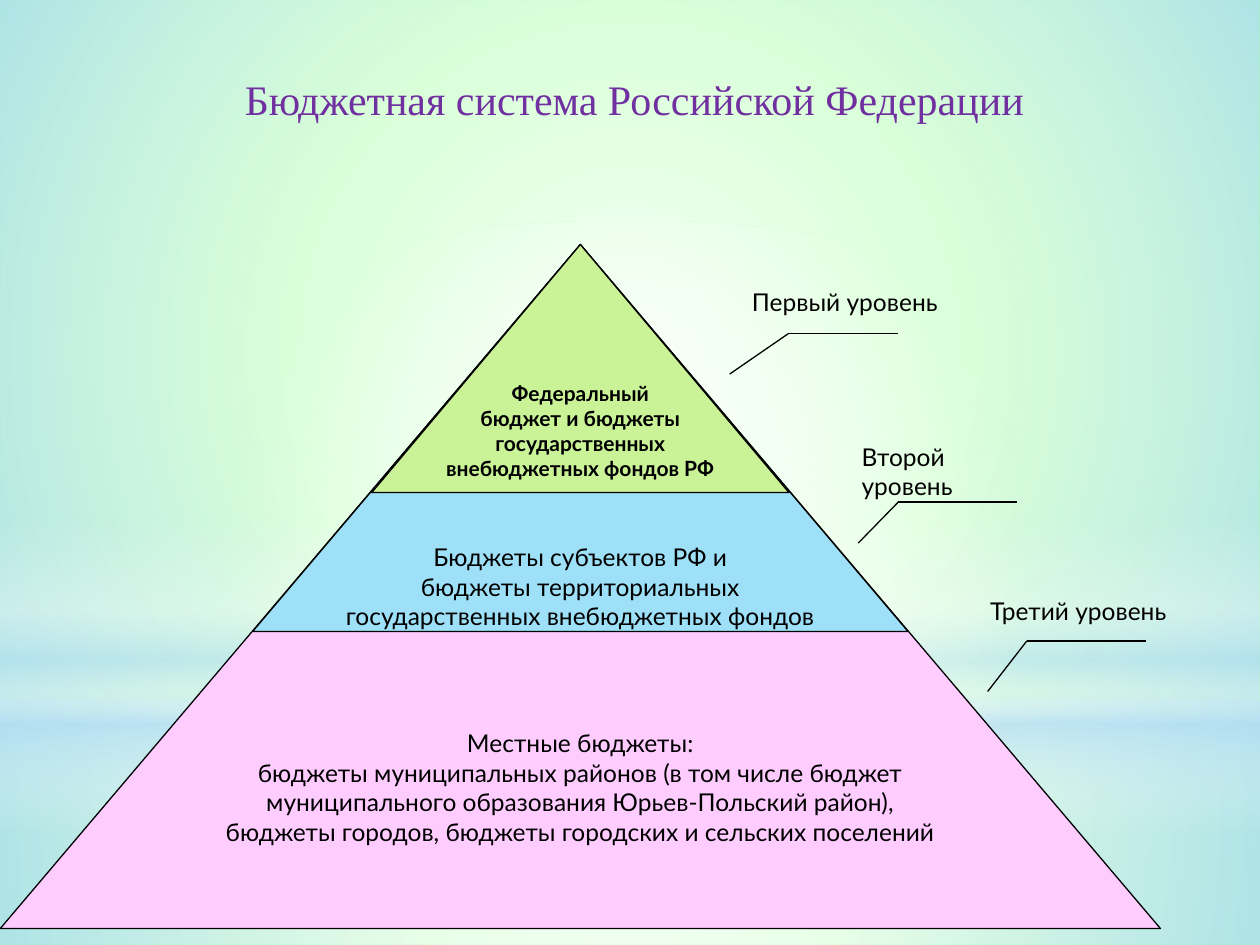
from lxml import etree
from pptx import Presentation
from pptx import util as u
from pptx.dml.color import RGBColor
from pptx.enum import shapes, text
from pptx.oxml import ns

APEX_X, APEX_Y = 11.7, 4.93
CIRCLE = {"l": "50000", "t": "50000", "r": "50000", "b": "50000"}

# Soft background light: shape, left, top, width, height, stops, angle (None is circular)
# A stop is position, colour, opacity in per cent
GLOWS = [
    ("RECTANGLE", 0, 14.17, 25.4, 4.88,
     [(0, "FFFFFF", 91), (37, "FFFFFF", 76), (100, "B4DCFA", 79)], None),
    ("RECTANGLE", 0, 0, 25.4, 14.17,
     [(0, "FFFFFF", 89), (48, "FFFFFF", 62), (100, "B4DCFA", 79)], None),
    ("RECTANGLE", 0, 10.46, 25.4, 6.35,
     [(0, "FFFFFF", 0), (29, "FFFFFF", 30), (45, "B4DCFA", 40),
      (55, "FFFFFF", 26), (65, "B4DCFA", 60), (100, "FFFFFF", 0)], 90),
    ("OVAL", 0, 4.45, 25.4, 14.17,
     [(0, "FFFFFF", 100), (56, "FFFFFF", 0)], None),
]

# Width, height, colour, font size, bold, top inset, bottom inset, lines
TIERS = [
    (23.39, 13.79, "FFCCFF", 14, False, 1.32, 0.13,
     ["Местные бюджеты:",
      "бюджеты муниципальных районов (в том числе бюджет",
      "муниципального образования Юрьев-Польский район),",
      "бюджеты городов, бюджеты городских и сельских поселений"]),
    (13.21, 7.8, "9EE0F8", 14, False, 2.08, 0,
     ["Бюджеты субъектов РФ и",
      "бюджеты территориальных",
      "государственных внебюджетных фондов"]),
    (8.41, 5, "CAF297", 12, True, 0.13, 0.13,
     ["Федеральный",
      "бюджет и бюджеты",
      "государственных",
      "внебюджетных фондов РФ"]),
]

# Label, its left, top and width, then the leader's start, bend and right end
LEVELS = [
    ("Первый уровень", 14.91, 5.66, 4.29, (14.71, 7.54), (15.9, 6.72), 18.11),
    ("Второй\vуровень", 17.12, 9.07, 4.11, (17.3, 10.95), (18.11, 10.12), 20.5),
    ("Третий уровень", 19.71, 11.89, 4.14, (19.91, 13.94), (20.7, 12.92), 23.11),
]


def color(value):
    return RGBColor.from_string(value)


def box(*lengths):
    return [u.Cm(length) for length in lengths]


def set_text(frame, content, size, font="Lato", fill="000000", bold=False, align="CENTER"):
    frame.text = content
    frame.vertical_anchor = text.MSO_ANCHOR.MIDDLE
    for paragraph in frame.paragraphs:
        paragraph.alignment = getattr(text.PP_ALIGN, align)
        for run in paragraph.runs:
            run.font.name = font
            run.font.size = u.Pt(size)
            run.font.bold = bold
            run.font.color.rgb = color(fill)


def add_glow(slide, kind, left, top, width, height, stops, angle):
    shape = slide.shapes.add_shape(getattr(shapes.MSO_SHAPE, kind),
                                   *box(left, top, width, height))
    shape.shadow.inherit = False
    shape.line.fill.background()
    shape.fill.gradient()
    gradient = shape.element.spPr.find(ns.qn("a:gradFill"))
    for child in list(gradient):
        gradient.remove(child)
    stop_list = etree.SubElement(gradient, ns.qn("a:gsLst"))
    for position, value, opacity in stops:
        stop = etree.SubElement(stop_list, ns.qn("a:gs"), pos=str(position * 1000))
        rgb = etree.SubElement(stop, ns.qn("a:srgbClr"), val=value)
        etree.SubElement(rgb, ns.qn("a:alpha"), val=str(opacity * 1000))
    if angle is None:
        circle = etree.SubElement(gradient, ns.qn("a:path"), {"path": "circle"})
        etree.SubElement(circle, ns.qn("a:fillToRect"), CIRCLE)
    else:
        etree.SubElement(gradient, ns.qn("a:lin"), ang=str(angle * 60000), scaled="0")


def add_title(slide):
    title = slide.shapes.title
    title.left, title.top, title.width, title.height = box(4.09, 0.99, 17.4, 2.01)
    set_text(title.text_frame, "Бюджетная система Российской Федерации", 24,
             font="Times New Roman", fill="7030A0")
    slide.shapes.element.append(title.element)  # in front of the background


def add_tier(slide, width, height, fill, size, bold, inset_top, inset_bottom, lines):
    shape = slide.shapes.add_shape(shapes.MSO_SHAPE.ISOSCELES_TRIANGLE,
                                   *box(APEX_X - width / 2, APEX_Y, width, height))
    shape.shadow.inherit = False
    shape.fill.solid()
    shape.fill.fore_color.rgb = color(fill)
    shape.line.color.rgb = color("000000")
    shape.line.width = u.Pt(0.75)
    frame = shape.text_frame
    frame.word_wrap = False
    frame.margin_top, frame.margin_bottom = box(inset_top, inset_bottom)
    set_text(frame, "\n".join(lines), size, bold=bold)


def add_line(slide, start, end):
    line = slide.shapes.add_connector(shapes.MSO_CONNECTOR.STRAIGHT, *box(*start, *end))
    line.line.color.rgb = color("000000")
    line.line.width = u.Pt(0.75)
    etree.SubElement(line.element.spPr, ns.qn("a:effectLst"))


def add_level(slide, label, left, top, width, start, bend, right):
    add_line(slide, start, bend)
    add_line(slide, bend, (right, bend[1]))
    frame = slide.shapes.add_textbox(*box(left, top, width, 0.86)).text_frame
    frame.word_wrap = True
    frame.margin_right = 0
    set_text(frame, label, 14, align="LEFT")


def main():
    presentation = Presentation()
    presentation.slide_width, presentation.slide_height = box(25.4, 19.05)
    slide = presentation.slides.add_slide(presentation.slide_layouts[5])

    # Background
    slide.background.fill.solid()
    slide.background.fill.fore_color.rgb = color("99FF99")
    for glow in GLOWS:
        add_glow(slide, *glow)

    # Title, pyramid and level labels
    add_title(slide)
    for tier in TIERS:
        add_tier(slide, *tier)
    for level in LEVELS:
        add_level(slide, *level)

    presentation.save("out.pptx")


if __name__ == "__main__":
    main()
